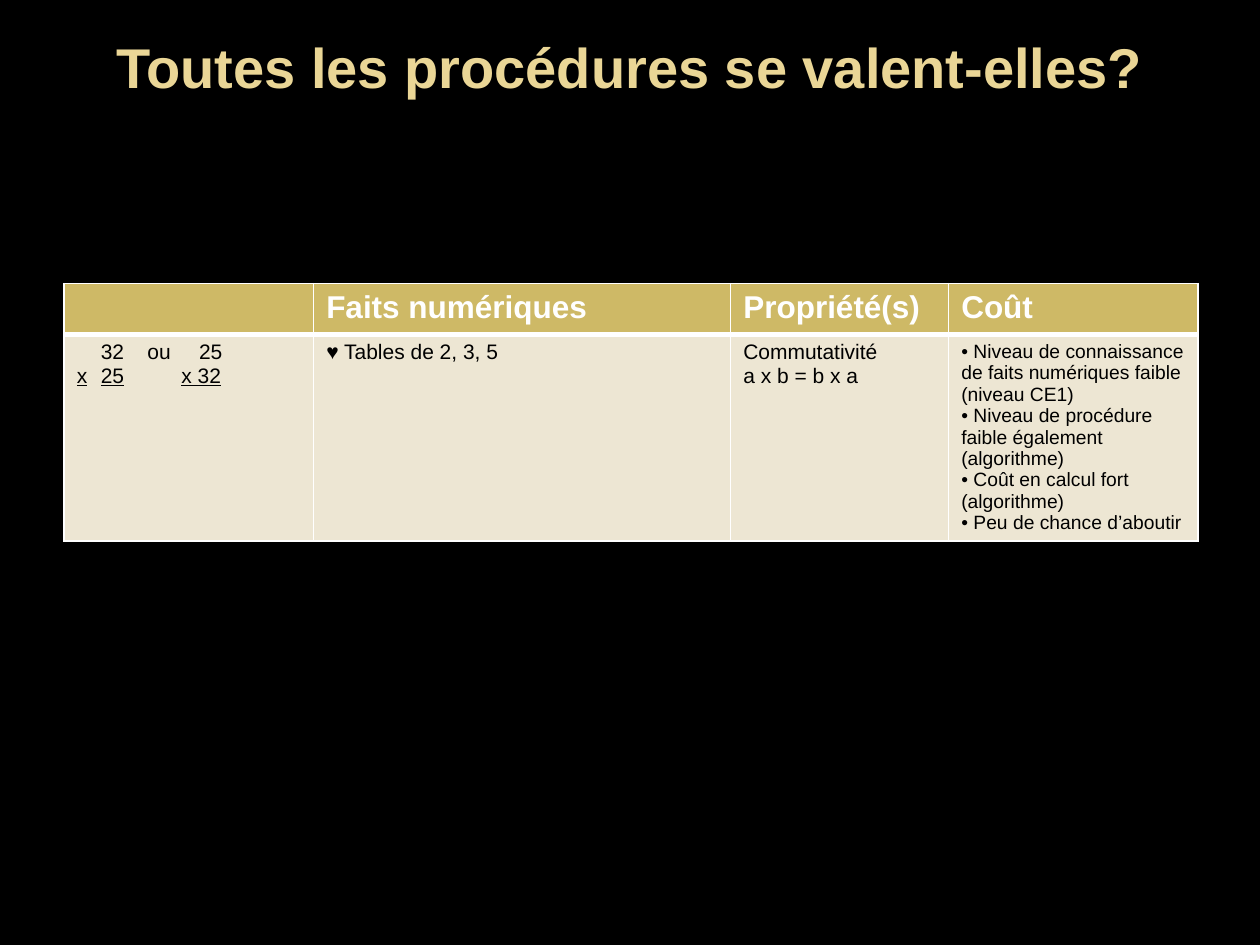
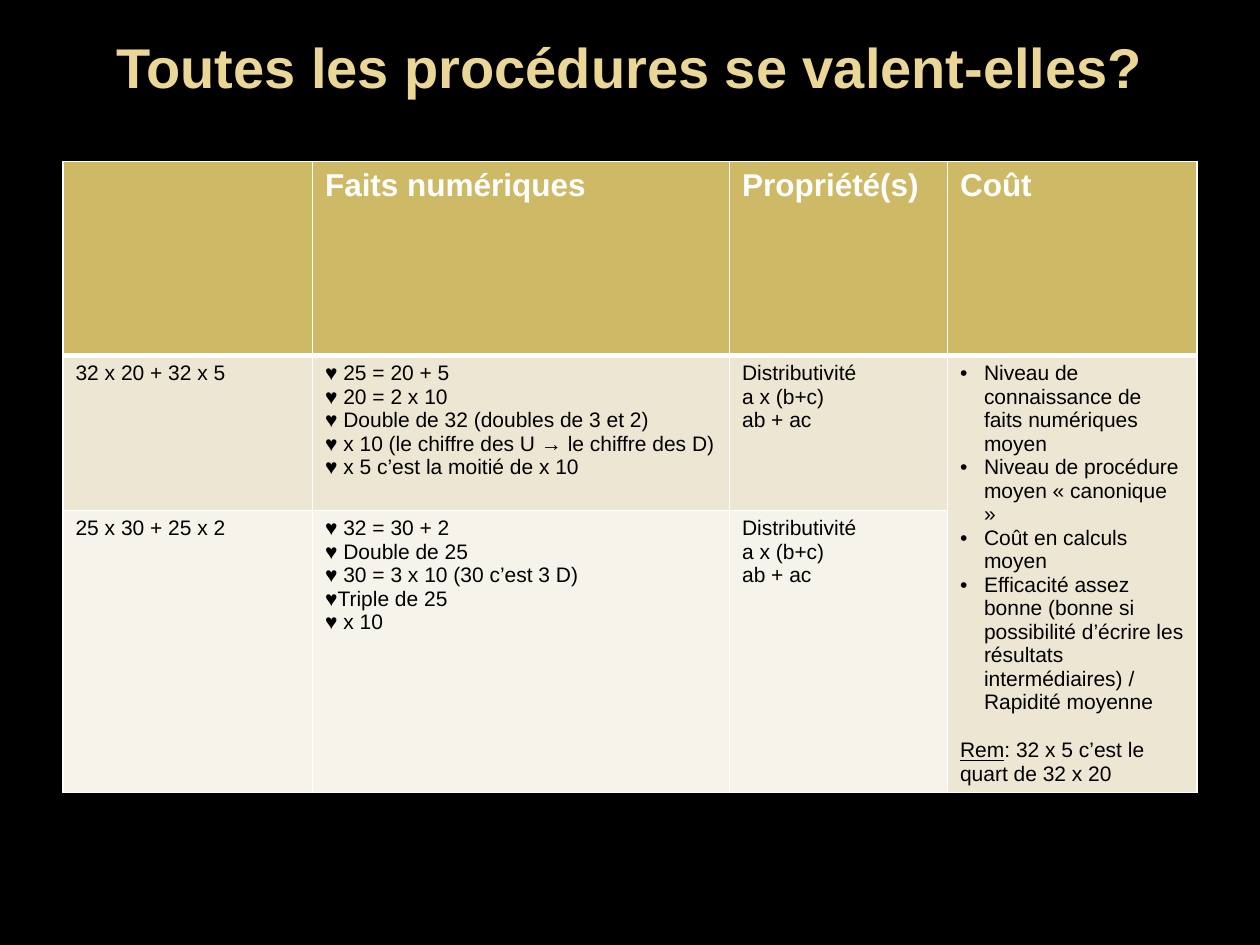
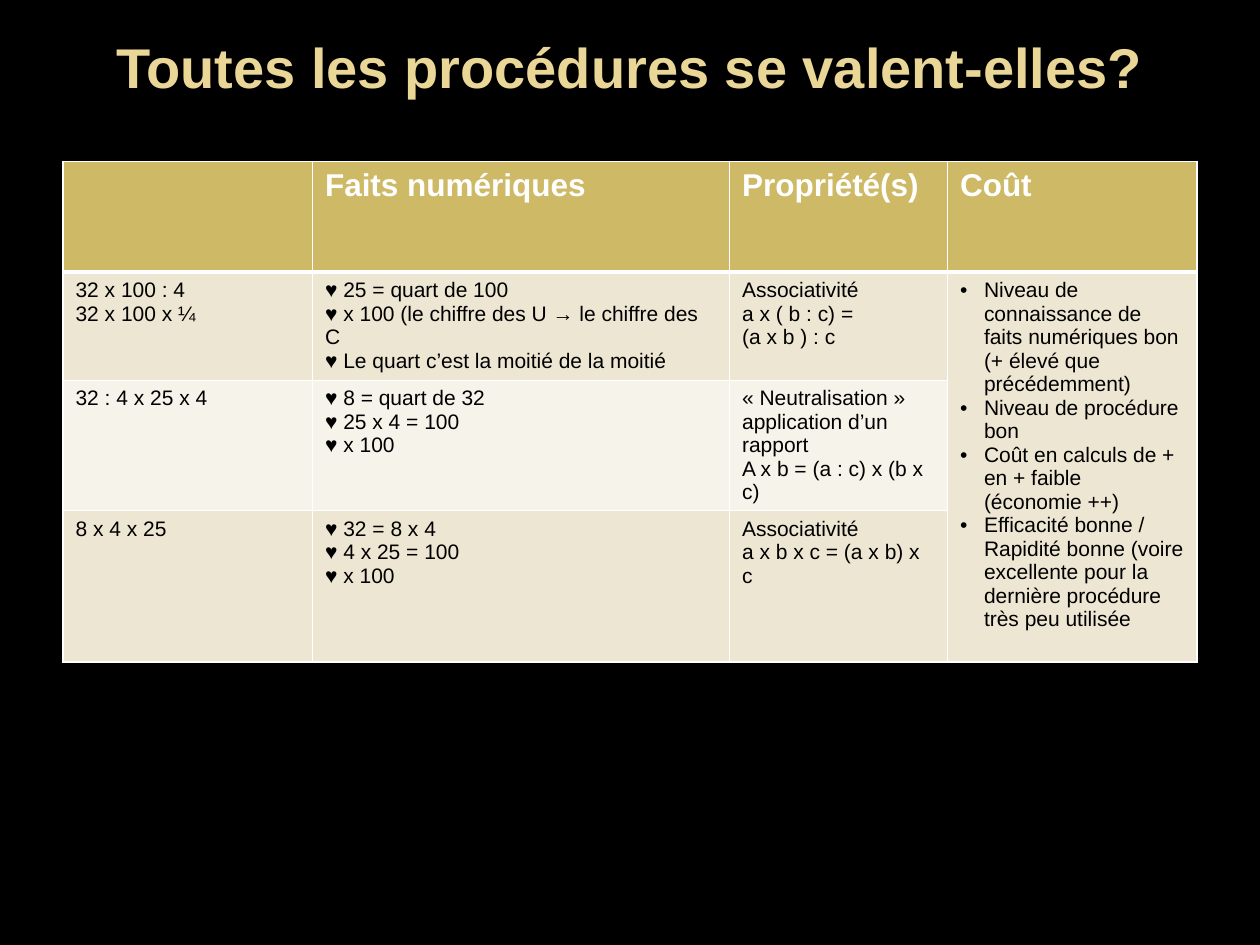
import pptx
import pptx.util
import pptx.dml.color
import pptx.enum.text
import pptx.oxml.ns
from lxml import etree

Inches, Pt = pptx.util.Inches, pptx.util.Pt
qn = pptx.oxml.ns.qn

COLORS = {
    "background": "000000",
    "title": "EAD696",
    "header": "CEB966",
    "bands": ["EDE6D3", "F6F3EA"],
    "line": "FFFFFF",
    "header_text": "FFFFFF",
    "body_text": "000000",
}
FONT = "Arial"
TITLE = "Toutes les procédures se valent-elles?"
HEADERS = ["", "Faits numériques", "Propriété(s)", "Coût"]
COLUMN_WIDTHS = [1.98, 3.31, 1.73, 1.98]
BULLET = "* "
BULLET_INDENT = 0.19
REMARK_GAP = 14
TAB_STOPS = {
    "\t32\tou\t25": [0.19, 0.56, 0.97],
    "_x\t25_\t_x 32_": [0.19, 0.83],
}
DISTRIBUTIVITY = ["Distributivité", "a x (b+c)", "ab + ac"]

SLIDES = [
    {
        "at": (0.51, 2.25),
        "heights": [0.38, 1.64],
        "cost_size": 11,
        "rows": [
            [list(TAB_STOPS), ["♥ Tables de 2, 3, 5"], ["Commutativité", "a x b = b x a"]],
        ],
        "cost": [
            "• Niveau de connaissance de faits numériques faible (niveau CE1)",
            "• Niveau de procédure faible également (algorithme)",
            "• Coût en calcul fort (algorithme)",
            "• Peu de chance d’aboutir",
        ],
    },
    {
        "at": (0.5, 1.28),
        "heights": [1.54, 1.23, 2.24],
        "cost_size": 12,
        "rows": [
            [
                ["32 x 20 + 32 x 5"],
                [
                    "♥ 25 = 20 + 5",
                    "♥ 20 = 2 x 10",
                    "♥ Double de 32 (doubles de 3 et 2)",
                    "♥ x 10 (le chiffre des U → le chiffre des D)",
                    "♥ x 5 c’est la moitié de x 10",
                ],
                DISTRIBUTIVITY,
            ],
            [
                ["25 x 30 + 25 x 2"],
                [
                    "♥ 32 = 30 + 2",
                    "♥ Double de 25",
                    "♥ 30 = 3 x 10 (30 c’est 3 D)",
                    "♥Triple de 25",
                    "♥ x 10",
                ],
                DISTRIBUTIVITY,
            ],
        ],
        "cost": [
            "* Niveau de connaissance de faits numériques moyen",
            "* Niveau de procédure moyen « canonique »",
            "* Coût en calculs moyen",
            "* Efficacité assez bonne (bonne si possibilité d’écrire les résultats "
            "intermédiaires) / Rapidité moyenne",
            "_Rem_: 32 x 5 c’est le quart de 32 x 20",
        ],
    },
    {
        "at": (0.5, 1.28),
        "heights": [0.88, 0.86, 1.03, 1.2],
        "cost_size": 12,
        "rows": [
            [
                ["32 x 100 : 4", "32 x 100 x ¼"],
                [
                    "♥ 25 = quart de 100",
                    "♥ x 100 (le chiffre des U → le chiffre des C",
                    "♥ Le quart c’est la moitié de la moitié",
                ],
                ["Associativité", "a x ( b : c) =", "(a x b ) : c"],
            ],
            [
                ["32 : 4 x 25 x 4"],
                ["♥ 8 = quart de 32", "♥ 25 x 4 = 100", "♥ x 100"],
                ["« Neutralisation » application d’un rapport", "A x b = (a : c) x (b x c)"],
            ],
            [
                ["8 x 4 x 25"],
                ["♥ 32 = 8 x 4", "♥ 4 x 25 = 100", "♥ x 100"],
                ["Associativité", "a x b x c = (a x b) x c"],
            ],
        ],
        "cost": [
            "* Niveau de connaissance de faits numériques bon (+ élevé que précédemment)",
            "* Niveau de procédure bon",
            "* Coût en calculs de + en + faible (économie ++)",
            "* Efficacité bonne / Rapidité bonne (voire excellente pour la dernière "
            "procédure très peu utilisée",
        ],
    },
]


def rgb(value):
    return pptx.dml.color.RGBColor.from_string(value)


def set_font(font, color, **formats):
    font.color.rgb = rgb(color)
    for name, value in {"name": FONT, **formats}.items():
        setattr(font, name, value)


def set_bullet(p):
    pPr = p._p.get_or_add_pPr()
    pPr.set("marL", str(Inches(BULLET_INDENT)))
    pPr.set("indent", str(-Inches(BULLET_INDENT)))
    etree.SubElement(pPr, qn("a:buFont"), typeface=FONT)
    etree.SubElement(pPr, qn("a:buChar"), char="•")


def set_tabs(p, stops):
    tabs = etree.SubElement(p._p.get_or_add_pPr(), qn("a:tabLst"))
    for stop in stops:
        etree.SubElement(tabs, qn("a:tab"), pos=str(Inches(stop)), algn="l")


def write_cell(cell, lines, color, size, bold):
    tf = cell.text_frame
    for i, line in enumerate(lines):
        p = tf.add_paragraph() if i else tf.paragraphs[0]
        if line.startswith(BULLET):
            set_bullet(p)
        elif line.startswith("_Rem"):
            p.space_before = Pt(REMARK_GAP)
        if line in TAB_STOPS:
            set_tabs(p, TAB_STOPS[line])
        for j, part in enumerate(line.removeprefix(BULLET).split("_")):
            if part:
                r = p.add_run()
                r.text = part
                set_font(r.font, color, size=Pt(size), bold=bold, underline=j % 2 == 1)


def style_cell(cell, fill, top, bottom):
    tcPr = cell._tc.get_or_add_tcPr()
    for side, width in {"L": 1, "R": 1, "T": top, "B": bottom}.items():
        ln = etree.SubElement(tcPr, qn(f"a:ln{side}"), w=str(Pt(width)))
        solid = etree.SubElement(ln, qn("a:solidFill"))
        etree.SubElement(solid, qn("a:srgbClr"), val=COLORS["line"])
    cell.fill.solid()
    cell.fill.fore_color.rgb = rgb(fill)


def add_title(s):
    title = s.shapes.title
    box = {"left": 0.5, "top": 0.13, "width": 9, "height": 0.79}
    for name, value in box.items():
        setattr(title, name, Inches(value))
    tf = title.text_frame
    tf.text = TITLE
    tf.vertical_anchor = pptx.enum.text.MSO_ANCHOR.MIDDLE
    p = tf.paragraphs[0]
    p.alignment = pptx.enum.text.PP_ALIGN.CENTER
    set_font(p.runs[0].font, COLORS["title"], size=Pt(32), bold=True)


def add_procedures(s, data):
    heights, rows = data["heights"], data["rows"]
    left, top = data["at"]
    frame = s.shapes.add_table(
        len(heights), len(HEADERS), Inches(left), Inches(top),
        Inches(sum(COLUMN_WIDTHS)), Inches(sum(heights)))
    table = frame.table
    table.horz_banding = False
    for column, width in zip(table.columns, COLUMN_WIDTHS):
        column.width = Inches(width)
    for row, height in zip(table.rows, heights):
        row.height = Inches(height)

    for c, header in enumerate(HEADERS):
        cell = table.cell(0, c)
        style_cell(cell, COLORS["header"], 1, 3)
        write_cell(cell, [header], COLORS["header_text"], 18, True)

    for i, row in enumerate(rows):
        for c in range(len(HEADERS)):
            style_cell(table.cell(i + 1, c), COLORS["bands"][i % 2], 1 if i else 3, 1)
        for c, lines in enumerate(row):
            write_cell(table.cell(i + 1, c), lines, COLORS["body_text"], 12, False)

    cost = table.cell(1, 3)
    if len(rows) > 1:
        cost.merge(table.cell(len(rows), 3))
    write_cell(cost, data["cost"], COLORS["body_text"], data["cost_size"], False)


def main():
    prs = pptx.Presentation()
    prs.slide_width, prs.slide_height = Inches(10), Inches(7.5)
    fill = prs.slide_master.background.fill
    fill.solid()
    fill.fore_color.rgb = rgb(COLORS["background"])
    for data in SLIDES:
        s = prs.slides.add_slide(prs.slide_layouts[5])
        add_title(s)
        add_procedures(s, data)
    prs.save("out.pptx")


if __name__ == "__main__":
    main()
